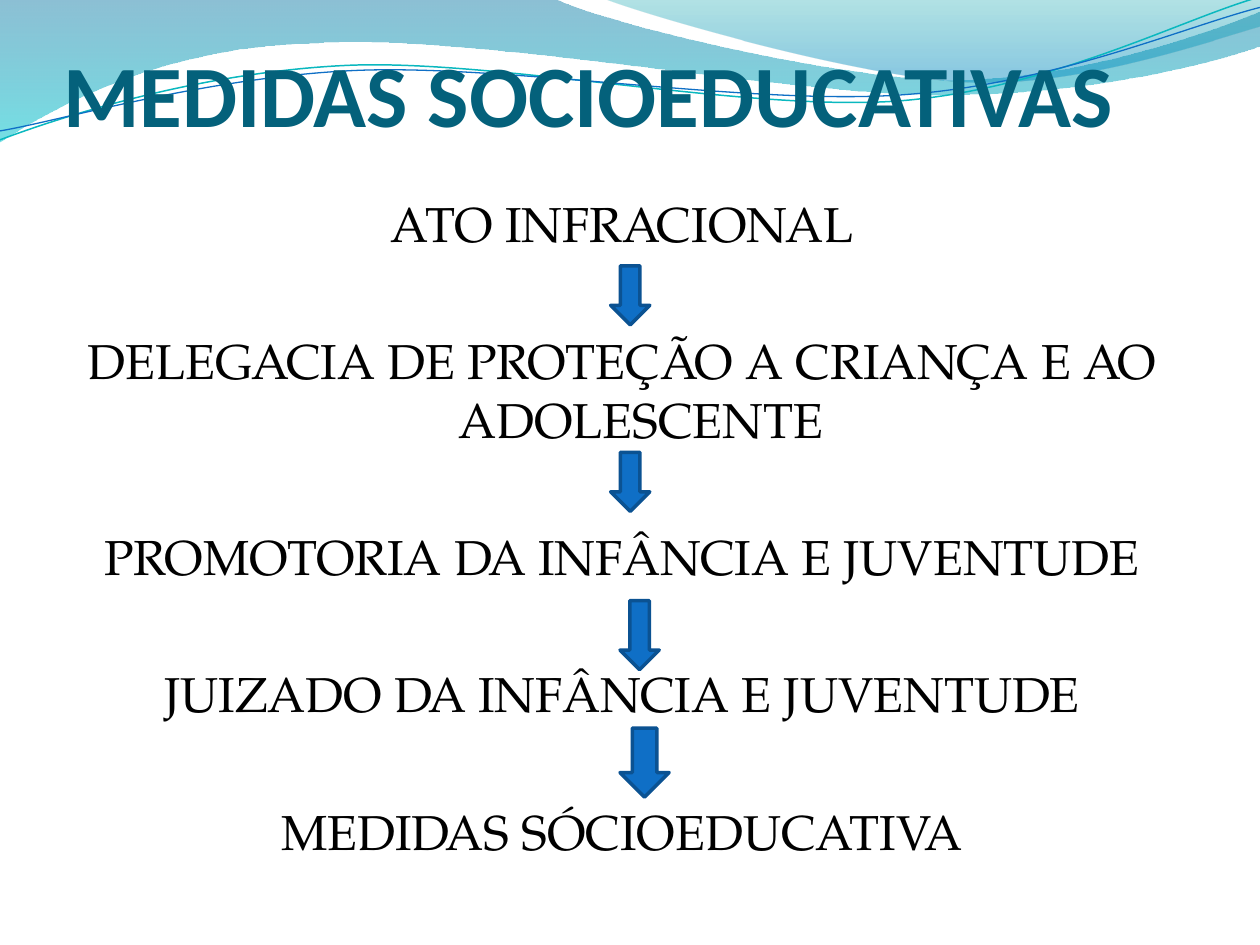
from dataclasses import dataclass

from lxml import etree
from pptx import Presentation
from pptx.dml.color import RGBColor
from pptx.enum.shapes import MSO_SHAPE
from pptx.enum.text import MSO_ANCHOR, MSO_AUTO_SIZE, PP_ALIGN
from pptx.oxml.ns import qn
from pptx.util import Cm, Pt

DOWN_ARROW = MSO_SHAPE.DOWN_ARROW
BOTTOM, TOP = MSO_ANCHOR.BOTTOM, MSO_ANCHOR.TOP
LEFT, CENTER = PP_ALIGN.LEFT, PP_ALIGN.CENTER
NO_AUTOFIT = MSO_AUTO_SIZE.NONE


@dataclass(frozen=True)
class Theme:
    heading: str = "04617B"
    text: str = "000000"
    arrow: str = "0F6FC6"
    arrow_edge: str = "0B5292"
    heading_font: str = "Calibri"
    body_font: str = "TeX Gyre Pagella"
    heading_size: float = 50
    body_size: float = 28
    line_height: float = 33.6
    # Gradient stops: position, colour, opacity in percent
    left_wave: tuple = ((0, "0074A1", 45), (1, "00C6CF", 55))
    right_wave: tuple = ((0, "00A1A9", 30), (0.8, "008BBF", 45))
    # Wave lines: colour, width
    teal_line: tuple = ("0AB8BF", 0.85)
    blue_line: tuple = ("0F6FC6", 0.75)


THEME = Theme()

# Boxes in cm: left, top, width, height
SLIDE_SIZE = (25.4, 19.05)
WAVE_BOX = (0, 0, 25.4, 2.9)
TITLE_BOX = (1.27, 0.33, 22.86, 2.59)
FLOW_BOX = (1.27, 3.77, 22.54, 14.48)

# Outlines in cm: a start, then one point for a line or three for a curve
LEFT_WAVE = [
    (0, 0),
    [(11.18, -0.03)],
    [(12.09, 0.43), (16.87, 1.6), (19.25, 1.6)],
    [(21.67, 1.6), (24.33, 0.66), (25.4, 0.23)],
    [(25.43, 0.91)],
    [(24.97, 1.12), (22.1, 1.93), (18.95, 1.91)],
    [(15.8, 1.91), (9.7, 0.71), (6.53, 0.86)],
    [(3.28, 0.91), (1.17, 2.11), (-0.03, 2.87)],
    [(0, 0)],
]
RIGHT_WAVE = [
    (12.17, -0.03),
    [(12.93, 0.28), (17.32, 1.57), (19.53, 1.65)],
    [(21.74, 1.75), (24.41, 0.81), (25.4, 0.53)],
    [(25.4, 0)],
    [(12.17, -0.03)],
]
# The two lines are drawn level and then tilted
LINE_TILT = 357.3
TEAL_LINE = [
    (-0.05, 2.22),
    [(1.19, 1.82), (4.02, 1.04), (7.05, 1.05)],
    [(10.05, 1.07), (15.02, 2.37), (18.08, 2.29)],
    [(21.13, 2.2), (23.87, 0.91), (25.41, 0.55)],
]
BLUE_LINE = [
    (-0.04, 2.04),
    [(1.16, 1.9), (4.18, 1.15), (7.2, 1.16)],
    [(10.25, 1.18), (15.13, 2.25), (18.18, 2.17)],
    [(21.21, 2.1), (23.93, 1.06), (25.45, 0.75)],
]

STAGES = [
    "ATO INFRACIONAL",
    "DELEGACIA DE PROTEÇÃO A CRIANÇA E AO ADOLESCENTE",
    "PROMOTORIA DA INFÂNCIA E JUVENTUDE",
    "JUIZADO DA INFÂNCIA E JUVENTUDE",
    "MEDIDAS SÓCIOEDUCATIVA",
]
# Arrows between stages, relative to the flow box
ARROWS = [
    (11.04, 1.59, 0.79, 1.19),
    (11.04, 5.35, 0.79, 1.19),
    (11.23, 8.34, 0.79, 1.39),
    (11.23, 10.91, 0.99, 1.39),
]


def rgb(colour):
    return RGBColor.from_string(colour)


def add_outline(slide, box, outline, close):
    start, *segments = outline
    points = [(Cm(box[0] + x), Cm(box[1] + y))
              for x, y in [start, *(point for segment in segments for point in segment)]]
    builder = slide.shapes.build_freeform(*points[0])
    builder.add_line_segments(points[1:], close=close)
    shape = builder.convert_to_shape()
    shape.shadow.inherit = False
    # Merge each run of three points into one curve
    nodes = iter(list(shape._element.iter(qn("a:lnTo"))))
    for segment in segments:
        first, *others = [next(nodes) for _ in segment]
        if others:
            curve = etree.Element(qn("a:cubicBezTo"))
            first.addprevious(curve)
            for node in (first, *others):
                curve.append(node[0])
                node.getparent().remove(node)
    return shape


def add_waves(slide, box):
    # Translucent bands
    for outline, stops in ((LEFT_WAVE, THEME.left_wave), (RIGHT_WAVE, THEME.right_wave)):
        band = add_outline(slide, box, outline, True)
        band.line.fill.background()
        band.fill.gradient()
        band.fill.gradient_angle = 270
        for stop, (position, colour, _) in zip(band.fill.gradient_stops, stops):
            stop.position = position
            stop.color.rgb = rgb(colour)
        colours = band._element.spPr.iter(qn("a:srgbClr"))
        for node, (_, _, opacity) in zip(colours, stops):
            etree.SubElement(node, qn("a:alpha"), val=str(opacity * 1000))
    # Thin lines
    for outline, (colour, width) in ((TEAL_LINE, THEME.teal_line), (BLUE_LINE, THEME.blue_line)):
        thread = add_outline(slide, box, outline, False)
        thread.rotation = LINE_TILT
        thread.fill.background()
        thread.line.color.rgb = rgb(colour)
        thread.line.width = Pt(width)


def place_text(holder, box, anchor):
    """Places a placeholder above the waves and returns its text frame."""
    holder.left, holder.top, holder.width, holder.height = map(Cm, box)
    tree = holder._element.getparent()
    tree.append(holder._element)
    frame = holder.text_frame
    frame.auto_size = NO_AUTOFIT
    frame.word_wrap = True
    frame.vertical_anchor = anchor
    return frame


def add_run(paragraph, text, font, size, colour, bold=False):
    run = paragraph.add_run()
    run.text = text
    run.font.name = font
    run.font.size = Pt(size)
    run.font.bold = bold
    run.font.color.rgb = rgb(colour)


def add_title(slide, box):
    frame = place_text(slide.shapes.title, box, BOTTOM)
    frame.margin_left = frame.margin_right = frame.margin_bottom = 0
    heading = frame.paragraphs[0]
    heading.alignment = LEFT
    add_run(heading, "MEDIDAS SOCIOEDUCATIVAS", THEME.heading_font,
            THEME.heading_size, THEME.heading, bold=True)


def add_flow(slide, box):
    # Stages
    frame = place_text(slide.placeholders[1], box, TOP)
    lead = 0.2 * THEME.body_size
    for index, stage in enumerate(STAGES):
        paragraph = frame.add_paragraph() if index else frame.paragraphs[0]
        paragraph.alignment = CENTER
        paragraph.space_before = Pt(2 * lead + THEME.line_height if index else lead)
        props = paragraph._p.get_or_add_pPr()
        props.set("marL", str(Cm(0.76)))
        props.set("indent", str(-Cm(0.76)))
        etree.SubElement(props, qn("a:buNone"))
        add_run(paragraph, stage, THEME.body_font, THEME.body_size, THEME.text)
    # Arrows
    for x, y, width, height in ARROWS:
        arrow = slide.shapes.add_shape(
            DOWN_ARROW, Cm(box[0] + x), Cm(box[1] + y), Cm(width), Cm(height))
        arrow.shadow.inherit = False
        arrow.fill.solid()
        arrow.fill.fore_color.rgb = rgb(THEME.arrow)
        arrow.line.color.rgb = rgb(THEME.arrow_edge)
        arrow.line.width = Pt(2)


def main():
    deck = Presentation()
    deck.slide_width, deck.slide_height = map(Cm, SLIDE_SIZE)
    slide = deck.slides.add_slide(deck.slide_layouts[1])
    add_waves(slide, WAVE_BOX)
    add_title(slide, TITLE_BOX)
    add_flow(slide, FLOW_BOX)
    deck.save("out.pptx")


if __name__ == "__main__":
    main()
